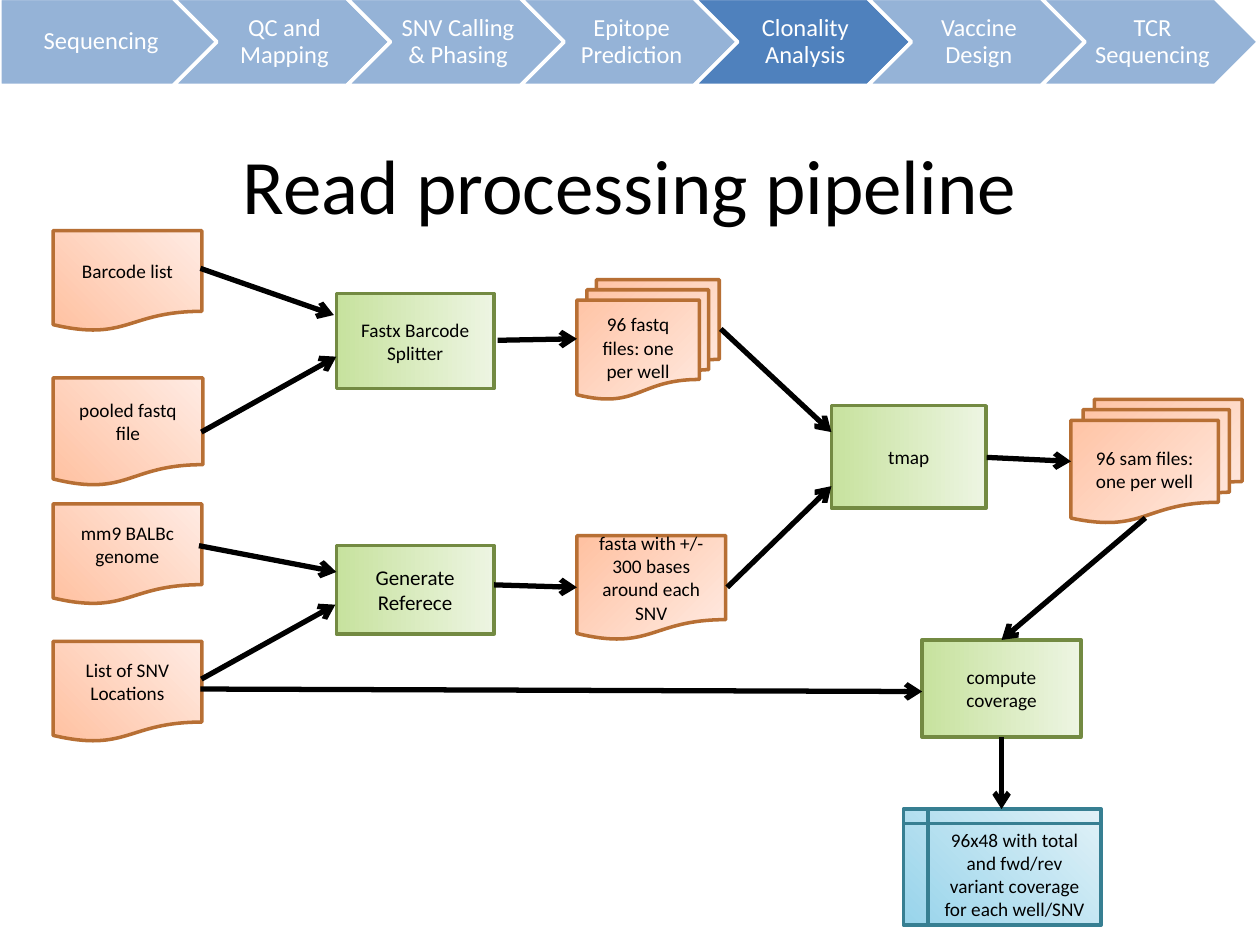
from lxml import etree
from pptx import Presentation
from pptx.dml.color import RGBColor
from pptx.enum.shapes import MSO_CONNECTOR, MSO_SHAPE as Preset
from pptx.enum.text import MSO_ANCHOR, PP_ALIGN
from pptx.oxml.ns import qn
from pptx.util import Cm, Pt


def rgb(value):
    return RGBColor.from_string(value)


def write(holder, text, size, color):
    frame = holder.text_frame
    frame.text = text
    frame.word_wrap = True
    frame.vertical_anchor = MSO_ANCHOR.MIDDLE
    paragraph = frame.paragraphs[0]
    paragraph.alignment = PP_ALIGN.CENTER
    font = paragraph.runs[0].font
    font.name, font.size, font.color.rgb = "Calibri", Pt(size), rgb(color)


deck = Presentation()
deck.slide_width, deck.slide_height = Cm(25.4), Cm(19.05)
slide = deck.slides.add_slide(deck.slide_layouts[6])
shapes = slide.shapes

title = shapes.add_textbox(Cm(1.27), Cm(2.11), Cm(22.86), Cm(3.18))
write(title, "Read processing pipeline", 44, "000000")

INPUT = ("FFC1A1", "FFEBE3", "B76F34", 45)
RESULT = ("FFC1A1", "FFEBE3", "B76F34", 315)
TOOL = ("C7E29E", "EDF5E2", "738A42", 0)
TABLE = ("98D4EB", "E0F1F7", "377F92", 45)
FILE, FILES = Preset.FLOWCHART_DOCUMENT, Preset.FLOWCHART_MULTIDOCUMENT
PROCESS, STORAGE = Preset.FLOWCHART_PROCESS, Preset.FLOWCHART_INTERNAL_STORAGE

steps = [
    (FILES, RESULT, 11.63, 5.64, 2.87, 2.41, "96 fastq files: one per well", 11),
    (FILE, INPUT, 1.07, 7.62, 3.02, 2.18, "pooled fastq file", 11),
    (PROCESS, TOOL, 6.78, 11, 3.18, 1.78, "Generate Referece", 12),
    (STORAGE, TABLE, 18.21, 16.31, 3.99, 2.34,
     "96x48 with total and fwd/rev variant coverage for each well/SNV", 11),
    (FILE, INPUT, 1.07, 4.65, 3, 2.03, "Barcode list", 11),
    (FILE, INPUT, 1.07, 12.93, 3, 2.03, "List of SNV Locations", 11),
    (FILE, INPUT, 1.07, 10.16, 3, 2.03, "mm9 BALBc genome", 11),
    (FILE, RESULT, 11.63, 10.8, 3, 2.11, "fasta with +/- 300 bases around each SNV", 11),
    (PROCESS, TOOL, 6.78, 5.92, 3.18, 1.91, "Fastx Barcode Splitter", 11),
    (PROCESS, TOOL, 16.76, 8.18, 3.12, 2.06, "tmap", 11),
    (FILES, RESULT, 21.59, 8.05, 3.45, 2.49, "96 sam files: one per well", 11),
    (PROCESS, TOOL, 18.59, 12.9, 3.2, 1.96, "compute coverage", 11),
]
for preset, (dark, light, outline, angle), x, y, width, height, label, size in steps:
    step = shapes.add_shape(preset, Cm(x), Cm(y), Cm(width), Cm(height))
    step.shadow.inherit = False
    step.fill.gradient()
    step.fill.gradient_angle = angle
    for stop, color, position in zip(step.fill.gradient_stops, (dark, light), (0, 1)):
        stop.color.rgb = rgb(color)
        stop.position = position
    step.line.color.rgb = rgb(outline)
    step.line.width = Pt(2)
    write(step, label, size, "000000")

flows = [
    (4.06, 8.71, 6.78, 7.19),
    (4.06, 13.69, 6.76, 12.19),
    (4.04, 13.89, 18.59, 13.94),
    (20.19, 14.86, 20.19, 16.31),
    (23.09, 10.44, 20.19, 12.9),
    (4.04, 5.41, 6.73, 6.35),
    (4.01, 11, 6.78, 11.53),
    (10.03, 6.86, 11.63, 6.83),
    (9.96, 11.79, 11.63, 11.84),
    (14.66, 11.84, 16.76, 9.8),
    (14.53, 6.63, 16.76, 8.71),
    (19.89, 9.22, 21.59, 9.3),
]
for ends in flows:
    flow = shapes.add_connector(MSO_CONNECTOR.STRAIGHT, *map(Cm, ends))
    flow.line.color.rgb = rgb("000000")
    flow.line.width = Pt(3)
    etree.SubElement(flow.line._get_or_add_ln(), qn("a:tailEnd"), type="arrow")
    etree.SubElement(flow._element.spPr, qn("a:effectLst"))

stages = ["Sequencing", "QC and Mapping", "SNV Calling & Phasing", "Epitope Prediction",
          "Clonality Analysis", "Vaccine Design", "TCR Sequencing"]
for index, name in enumerate(stages):
    preset = Preset.CHEVRON if index else Preset.PENTAGON
    stage = shapes.add_shape(preset, Cm(3.5 * index), Cm(-0.03), Cm(4.37), Cm(1.75))
    stage.shadow.inherit = False
    stage.fill.solid()
    stage.fill.fore_color.rgb = rgb("4F81BD" if name == "Clonality Analysis" else "95B3D7")
    stage.line.color.rgb = rgb("FFFFFF")
    stage.line.width = Pt(2)
    write(stage, name, 14, "FFFFFF")
    frame = stage.text_frame
    frame.margin_left = Cm(0.15 if index else 0.2)
    frame.margin_right = Cm(0.05)
    frame.margin_top = frame.margin_bottom = Cm(0.1)
    frame.paragraphs[0].line_spacing = 0.9

deck.save("out.pptx")
